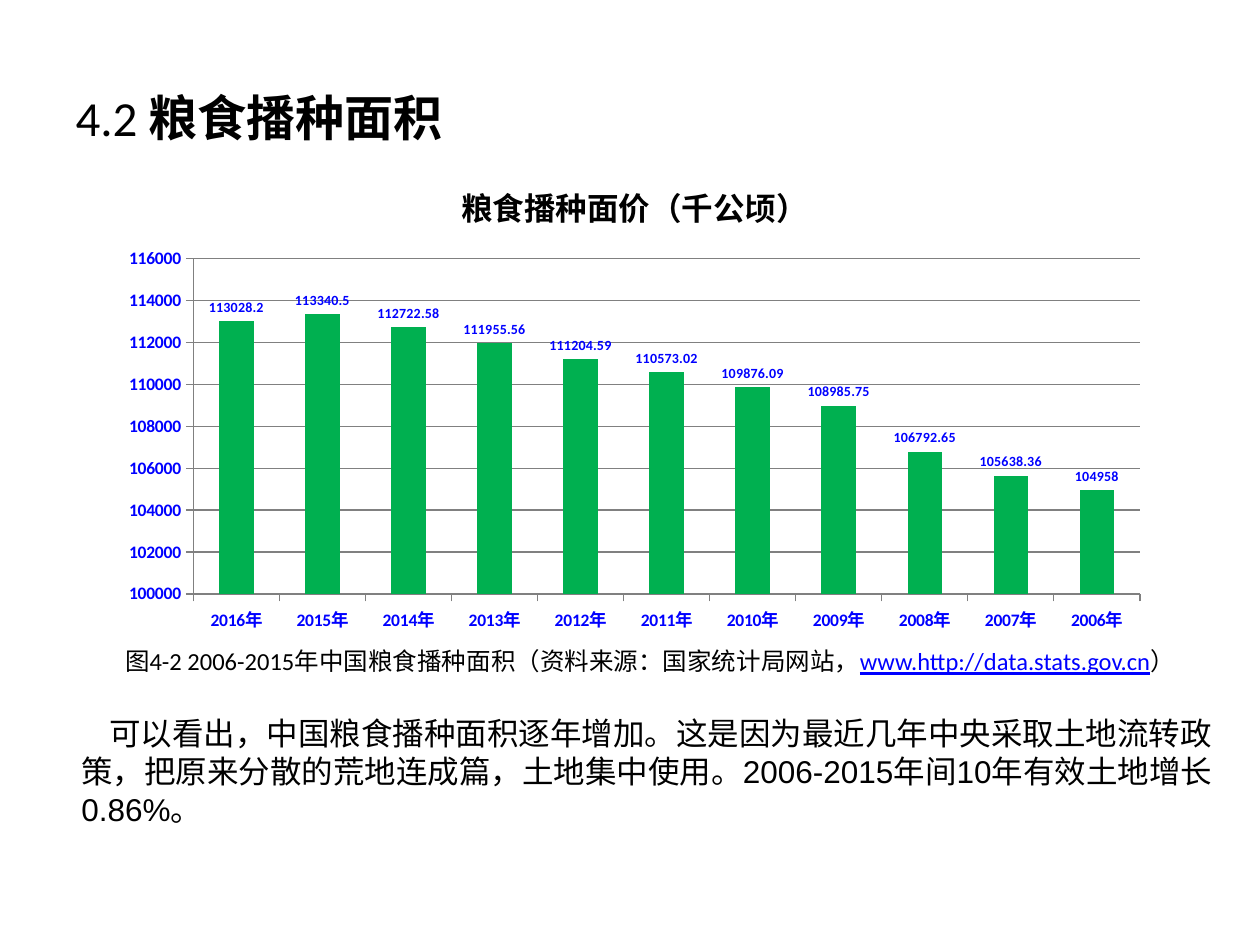
from pptx import Presentation
from pptx.chart.data import CategoryChartData as ChartData
from pptx.dml.color import RGBColor
from pptx.enum.chart import XL_CHART_TYPE as Kind
from pptx.enum.chart import XL_LABEL_POSITION as Spot
from pptx.enum.chart import XL_TICK_MARK as Tick
from pptx.enum.text import MSO_ANCHOR as Anchor
from pptx.enum.text import PP_ALIGN as Align
from pptx.util import Emu, Pt

BLACK = RGBColor(0, 0, 0)
BLUE = RGBColor(0, 0, 255)
GREEN = RGBColor(0, 176, 80)
GRAY = RGBColor(128, 128, 128)
SCALE = 914400 / 126
AREAS = [113028.2, 113340.5, 112722.58, 111955.56, 111204.59, 110573.02,
         109876.09, 108985.75, 106792.65, 105638.36, 104958]


def px(num):
    """Turn px into EMU."""
    return Emu(round(num * SCALE))


def style(font, size, color=BLACK, bold=False, name="Calibri"):
    """Set the look of a font."""
    font.size, font.bold, font.name = Pt(size), bold, name
    font.color.rgb = color


def add_runs(para, *texts):
    """Add one run for each text and return them all."""
    for text in texts:
        para.add_run().text = text
    return para.runs


def add_title(slide, box):
    """Fill the title placeholder."""
    title = slide.shapes.title
    title.left, title.top, title.width, title.height = map(px, box)
    frame = title.text_frame
    frame.vertical_anchor = Anchor.MIDDLE
    para = frame.paragraphs[0]
    para.alignment = Align.LEFT
    num, name = add_runs(para, "4.2 ", "粮食播种面积")
    style(num.font, 28)
    style(name.font, 28, bold=True)


def style_axis(axis):
    """Give an axis its ticks, line and font."""
    axis.major_tick_mark = Tick.OUTSIDE
    axis.minor_tick_mark = Tick.NONE
    axis.format.line.color.rgb = GRAY
    axis.format.line.width = Pt(0.75)
    style(axis.tick_labels.font, 10, BLUE, True)


def add_bars(slide, box):
    """Draw the column chart of sown area by year."""
    name = "粮食播种面价（千公顷）"
    data = ChartData()
    data.categories = [f"{2016 - step}年" for step in range(len(AREAS))]
    data.add_series(name, AREAS)
    chart = slide.shapes.add_chart(
        Kind.COLUMN_CLUSTERED, *map(px, box), data).chart
    style(chart.font, 10)
    chart.has_legend = False
    chart.has_title = True
    head = chart.chart_title.text_frame
    head.text = name
    style(head.paragraphs[0].runs[0].font, 18, bold=True)
    chart.chart_title.include_in_layout = False

    axis = chart.value_axis
    style_axis(chart.category_axis)
    style_axis(axis)
    axis.minimum_scale, axis.maximum_scale = 100000, 116000
    axis.major_unit = 2000
    axis.has_major_gridlines = True
    grid = axis.major_gridlines.format.line
    grid.color.rgb, grid.width = GRAY, Pt(0.75)

    plot = chart.plots[0]
    plot.gap_width, plot.vary_by_categories = 150, False
    bars = plot.series[0]
    bars.format.fill.solid()
    bars.format.fill.fore_color.rgb = GREEN
    labels = bars.data_labels
    labels.show_value = True
    labels.position = Spot.OUTSIDE_END
    style(labels.font, 8, BLUE, True)


def add_notes(slide, box):
    """Write the caption and the comment below the chart."""
    frame = slide.shapes.add_textbox(*map(px, box)).text_frame
    frame.word_wrap = True
    para = frame.paragraphs[0]
    para.alignment = Align.CENTER
    runs = add_runs(
        para, "图4-2 2006-2015年中国粮食播种面积（资料来源：国家统计局网站，",
        "www.http://data.stats.gov.cn", "）")
    for run in runs:
        style(run.font, 14)
    link = runs[1].font
    link.color.rgb, link.underline = BLUE, True

    para = frame.add_paragraph()
    para.space_before = Pt(22)
    para._p.get_or_add_pPr().set("indent", str(px(28)))
    first, rest = add_runs(
        para, "可以看出，中国粮食播种面积逐年增加。",
        "这是因为最近几年中央采取土地流转政策，把原来分散的荒地连成篇，"
        "土地集中使用。2006-2015年间10年有效土地增长0.86%。")
    style(first.font, 18)
    style(rest.font, 18, name="Arial")


def main():
    """Build and save the slide."""
    deck = Presentation()
    deck.slide_width, deck.slide_height = px(1260), px(945)
    slide = deck.slides.add_slide(deck.slide_layouts[5])
    add_title(slide, (63, 38, 1134, 158))
    add_bars(slide, (108, 158, 1053, 483))
    add_notes(slide, (69, 640, 1162, 232))
    deck.save("out.pptx")


if __name__ == "__main__":
    main()
